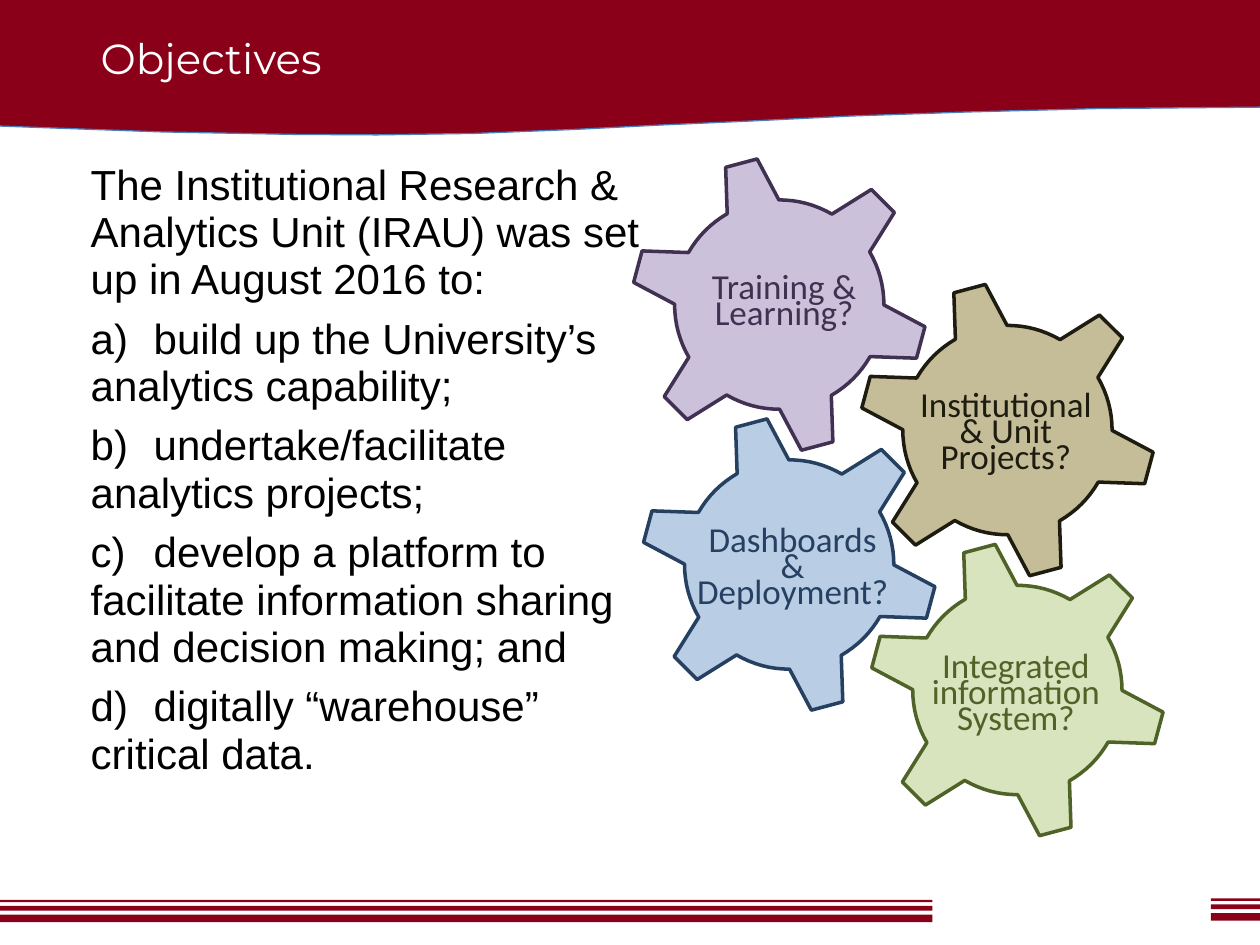
from dataclasses import dataclass
from math import cos, radians, sin

from lxml.etree import SubElement
from pptx import Presentation
from pptx.dml.color import RGBColor
from pptx.enum.shapes import MSO_SHAPE
from pptx.enum.text import MSO_ANCHOR, PP_ALIGN
from pptx.oxml.ns import qn
from pptx.util import Cm, Pt

RED = RGBColor(0x89, 0x00, 0x18)
BLUE = RGBColor(0x4A, 0x7E, 0xBB)
WHITE = RGBColor(0xFF, 0xFF, 0xFF)
BLACK = RGBColor(0x00, 0x00, 0x00)
LILAC, PLUM = RGBColor(0xCC, 0xC1, 0xDA), RGBColor(0x40, 0x31, 0x52)
SAND, BROWN = RGBColor(0xC4, 0xBD, 0x97), RGBColor(0x1E, 0x1C, 0x11)
SKY, NAVY = RGBColor(0xB9, 0xCD, 0xE5), RGBColor(0x25, 0x40, 0x61)
MINT, OLIVE = RGBColor(0xD7, 0xE4, 0xBD), RGBColor(0x4F, 0x62, 0x28)

TEETH, TURN = 6, 345
ROOT, TIP = 2.11, 2.97  # radii in cm
ROOT_HALF, TIP_HALF = 14.8, 6.35  # half angles of a tooth


@dataclass
class Box:
    left: float
    top: float
    width: float
    height: float

    def cm(self) -> list:
        return [Cm(v) for v in (self.left, self.top, self.width, self.height)]


@dataclass
class Gear:
    x: float
    y: float
    fill: RGBColor
    ink: RGBColor
    label: str
    box: Box


GEARS = [
    Gear(15.71, 6.14, LILAC, PLUM, "Training & Learning?",
         Box(14.12, 5.26, 3.38, 1.83)),
    Gear(20.31, 8.67, SAND, BROWN, "Institutional & Unit Projects?",
         Box(18.44, 7.9, 3.68, 1.83)),
    Gear(15.91, 11.38, SKY, NAVY, "Dashboards & Deployment?",
         Box(13.89, 10.36, 4.18, 2.36)),
    Gear(20.51, 13.91, MINT, OLIVE, "Integrated information System?",
         Box(18.64, 13.16, 3.68, 1.83)),
]

WAVE = [(-0.05, 2.54), (3.25, 2.66), (5.92, 2.71), (7.6, 2.72), (9.58, 2.69),
        (11.58, 2.61), (13.34, 2.52), (15.14, 2.44), (17.15, 2.34),
        (19.48, 2.26), (22.1, 2.19), (25.45, 2.16), (25.45, -0.08),
        (-0.05, -0.08)]

BARS = [(18.14, 0.05), (18.26, 0.1), (18.44, 0.15)]  # top, height

BODY = [
    "The Institutional Research & Analytics Unit (IRAU) was set up in August 2016 to:",
    "a)\tbuild up the University’s analytics capability;",
    "b)\tundertake/facilitate analytics projects;",
    "c)\tdevelop a platform to facilitate information sharing and decision making; and",
    "d)\tdigitally “warehouse” critical data.",
]


def apply(item, style: dict) -> None:
    for name, value in style.items():
        setattr(item, name, value)


def outline(shapes, points: list, fill: RGBColor, ink: RGBColor, weight: float):
    """Draw a closed shape through points given in cm."""
    first, *rest = [(Cm(x), Cm(y)) for x, y in points]
    pen = shapes.build_freeform(*first)
    pen.add_line_segments(rest, close=True)
    shape = pen.convert_to_shape()
    shape.shadow.inherit = False
    shape.fill.solid()
    shape.fill.fore_color.rgb = fill
    shape.line.color.rgb = ink
    shape.line.width = Pt(weight)
    return shape


def bar(shapes, box: Box) -> None:
    shape = shapes.add_shape(MSO_SHAPE.RECTANGLE, *box.cm())
    shape.shadow.inherit = False
    shape.fill.solid()
    shape.fill.fore_color.rgb = RED
    shape.line.fill.background()


def text(shapes, box: Box, lines: list, font: dict, ink: RGBColor,
         para: dict, inset: float, anchor=MSO_ANCHOR.TOP, gap: float = 0,
         tab: float = 0) -> None:
    frame = shapes.add_textbox(*box.cm()).text_frame
    sides = ("left", "right", "top", "bottom")
    apply(frame, {f"margin_{side}": Cm(inset) for side in sides})
    apply(frame, {"word_wrap": True, "vertical_anchor": anchor})
    for i, line in enumerate(lines):
        p = frame.add_paragraph() if i else frame.paragraphs[0]
        p.text = line
        apply(p, para)
        if i:
            p.space_before = Pt(gap)
        if tab:
            stops = SubElement(p._p.get_or_add_pPr(), qn("a:tabLst"))
            SubElement(stops, qn("a:tab"), pos=str(Cm(tab)), algn="l")
        apply(p.font, font)
        p.font.color.rgb = ink


def rim(x: float, y: float) -> list:
    """List the points of an upright gear centred on x, y."""
    valley = 360 / TEETH - 2 * ROOT_HALF
    steps = 8
    polar = []
    for k in range(TEETH):
        mid = k * 360 / TEETH
        polar += [(TIP, mid - TIP_HALF), (TIP, mid + TIP_HALF)]
        polar += [(ROOT, mid + ROOT_HALF + valley * s / steps)
                  for s in range(steps + 1)]
    return [(x + r * sin(radians(a)), y - r * cos(radians(a)))
            for r, a in polar]


def cog(shapes, gear: Gear) -> None:
    shape = outline(shapes, rim(gear.x, gear.y), gear.fill, gear.ink, 2)
    shape.rotation = TURN
    text(shapes, gear.box, [gear.label],
         {"name": "Calibri", "size": Pt(20)}, gear.ink,
         {"alignment": PP_ALIGN.CENTER, "line_spacing": Pt(15)},
         0.1, MSO_ANCHOR.MIDDLE)


def main() -> None:
    deck = Presentation()
    apply(deck, {"slide_width": Cm(25.4), "slide_height": Cm(19.05)})
    shapes = deck.slides.add_slide(deck.slide_layouts[6]).shapes

    outline(shapes, WAVE, RED, BLUE, 0.75)
    for left, width, lift in ((0, 18.8, 0), (24.41, 0.99, 0.03)):
        for top, height in BARS:
            bar(shapes, Box(left, top - lift, width, height))

    text(shapes, Box(1.9, 0.53, 21.59, 1.7), ["Objectives"],
         {"name": "Montserrat", "size": Pt(24)}, WHITE, {}, 0.13)
    text(shapes, Box(1.7, 3.12, 11.35, 14.48), BODY,
         {"name": "Arial", "size": Pt(24)}, BLACK,
         {"line_spacing": Pt(27)}, 0.13, gap=7, tab=1.27)
    for gear in GEARS:
        cog(shapes, gear)

    deck.save("out.pptx")


if __name__ == "__main__":
    main()
